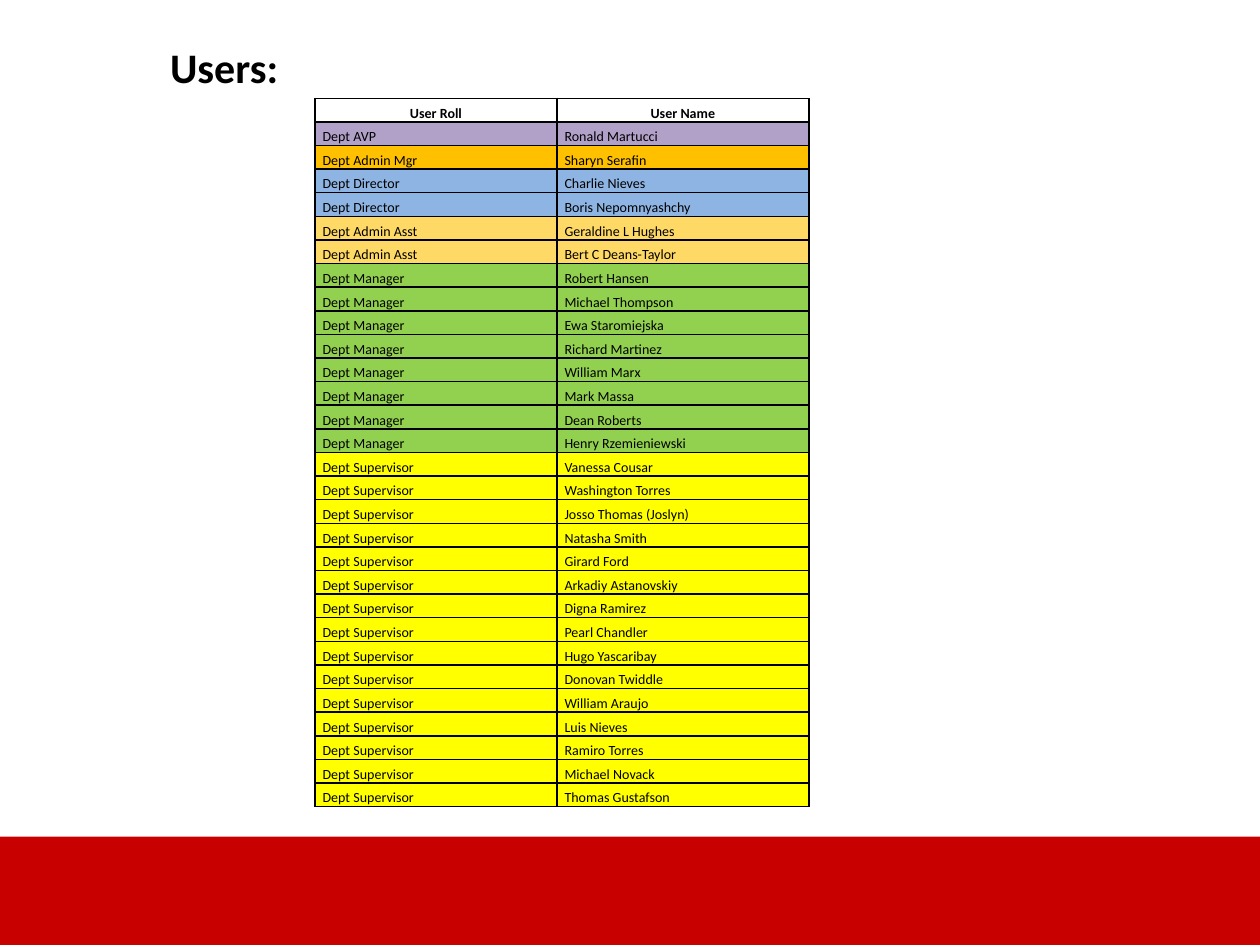
from lxml.etree import SubElement
from pptx import Presentation
from pptx.dml.color import RGBColor
from pptx.enum.shapes import MSO_SHAPE
from pptx.enum.text import MSO_ANCHOR, MSO_AUTO_SIZE, PP_ALIGN
from pptx.oxml.ns import qn
from pptx.util import Inches, Pt

FONT = "Calibri"
BLACK = "000000"
RED = "C80000"
HEADINGS = ("User Roll", "User Name")
USERS_BY_ROLE = [
    ("Dept AVP", "B1A0C7", ["Ronald Martucci"]),
    ("Dept Admin Mgr", "FFC000", ["Sharyn Serafin"]),
    ("Dept Director", "8DB4E2", ["Charlie Nieves", "Boris Nepomnyashchy"]),
    ("Dept Admin Asst", "FFD966", ["Geraldine L Hughes", "Bert C Deans-Taylor"]),
    ("Dept Manager", "92D050", [
        "Robert Hansen", "Michael Thompson", "Ewa Staromiejska", "Richard Martinez",
        "William Marx", "Mark Massa", "Dean Roberts", "Henry Rzemieniewski",
    ]),
    ("Dept Supervisor", "FFFF00", [
        "Vanessa Cousar", "Washington Torres", "Josso Thomas (Joslyn)", "Natasha Smith",
        "Girard Ford", "Arkadiy Astanovskiy", "Digna Ramirez", "Pearl Chandler",
        "Hugo Yascaribay", "Donovan Twiddle", "William Araujo", "Luis Nieves",
        "Ramiro Torres", "Michael Novack", "Thomas Gustafson",
    ]),
]


def color(value):
    return RGBColor.from_string(value)


def write(text_frame, text, size, bold, align):
    paragraph = text_frame.paragraphs[0]
    paragraph.alignment = align
    paragraph.line_spacing = 1.07
    run = paragraph.add_run()
    run.text = text
    run.font.name = FONT
    run.font.size = Pt(size)
    run.font.bold = bold
    run.font.color.rgb = color(BLACK)
    return paragraph


def add_footer_band(slide, box):
    band = slide.shapes.add_shape(MSO_SHAPE.RECTANGLE, *box)
    band.shadow.inherit = False
    band.fill.solid()
    band.fill.fore_color.rgb = color(RED)
    band.line.fill.background()


def format_title(slide, box, text):
    title = slide.shapes.title
    title.left, title.top, title.width, title.height = box
    text_frame = title.text_frame
    text_frame.word_wrap = False
    text_frame.auto_size = MSO_AUTO_SIZE.SHAPE_TO_FIT_TEXT
    text_frame.vertical_anchor = MSO_ANCHOR.TOP
    paragraph = write(text_frame, text, 24, True, PP_ALIGN.LEFT)
    paragraph.space_before = Pt(0)
    paragraph.space_after = Pt(8)


def add_borders(cell):
    properties = cell._tc.get_or_add_tcPr()
    for side in ("a:lnL", "a:lnR", "a:lnT", "a:lnB"):
        line = SubElement(properties, qn(side), w=str(Pt(1)))
        fill = SubElement(line, qn("a:solidFill"))
        SubElement(fill, qn("a:srgbClr"), val=BLACK)


def format_cell(cell, text, fill, heading):
    cell.margin_left = cell.margin_right = Inches(0.06)
    cell.margin_top = cell.margin_bottom = 0
    cell.vertical_anchor = MSO_ANCHOR.BOTTOM
    add_borders(cell)
    if fill:
        cell.fill.solid()
        cell.fill.fore_color.rgb = color(fill)
    else:
        cell.fill.background()
    align = PP_ALIGN.CENTER if heading else PP_ALIGN.LEFT
    write(cell.text_frame, text, 8, heading, align)


def add_user_table(slide, box):
    records = [(HEADINGS, None)]
    records += [((role, name), fill) for role, fill, names in USERS_BY_ROLE for name in names]
    left, top, width, height = box
    table = slide.shapes.add_table(len(records), len(HEADINGS), *box).table
    table.first_row = table.horz_banding = False
    for column, share in zip(table.columns, (0.49, 0.51)):
        column.width = int(width * share)
    for index, (texts, fill) in enumerate(records):
        table.rows[index].height = height // len(records)
        for cell, text in zip(table.rows[index].cells, texts):
            format_cell(cell, text, fill, index == 0)


def main():
    presentation = Presentation()
    presentation.slide_width = Inches(10)
    presentation.slide_height = Inches(7.5)
    slide = presentation.slides.add_slide(presentation.slide_layouts.get_by_name("Title Only"))

    def box(*lengths):
        return [Inches(length) for length in lengths]

    add_footer_band(slide, box(0, 6.64, 10, 0.86))
    format_title(slide, box(1.25, 0.25, 1.07, 0.53), "Users:")
    add_user_table(slide, box(2.5, 0.78, 3.92, 5.63))
    presentation.save("out.pptx")


if __name__ == "__main__":
    main()
